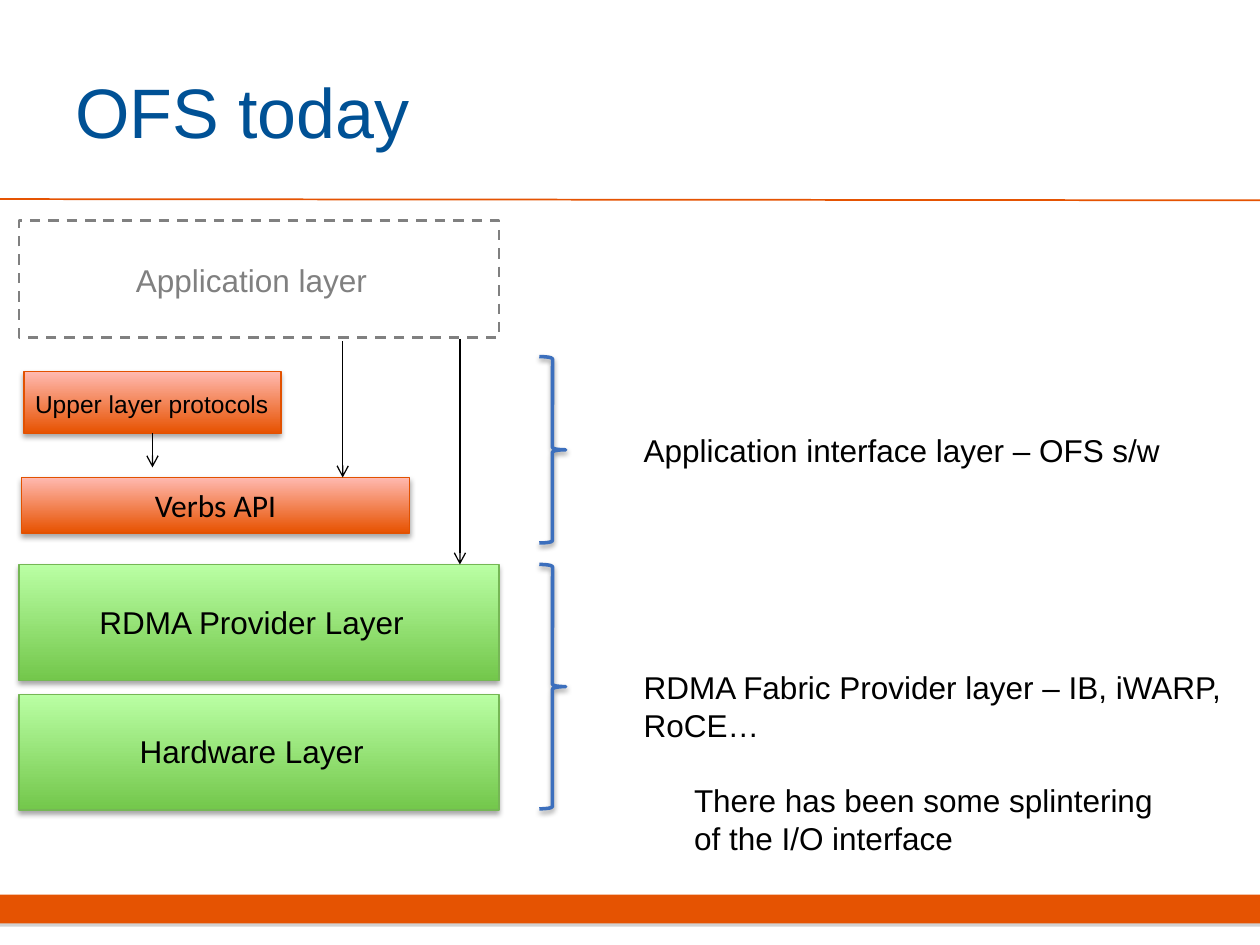
"""Build the slide that shows the OFS software layers of today."""
import pptx
import pptx.util
import pptx.dml.color
import pptx.enum.dml
import pptx.enum.shapes
import pptx.enum.text
import pptx.oxml
import pptx.oxml.ns

Inches, Pt = pptx.util.Inches, pptx.util.Pt
Kind = pptx.enum.shapes.MSO_SHAPE
Anchor = pptx.enum.text.MSO_ANCHOR
Align = pptx.enum.text.PP_ALIGN
Size = pptx.enum.text.MSO_AUTO_SIZE

HUES = {
    "orange": "E55302", "edge": "E25100", "deep": "E75200", "pink": "FFB9B0",
    "green": "73C74B", "lime": "BAFFA4", "moss": "75B755", "gray": "808080",
    "blue": "3C6FBD", "navy": "005195", "black": "000000",
}
WARM = ("deep", "pink", "edge")
COOL = ("green", "lime", "moss")

LEFT, WIDE = 0.15, 3.81
LAYERS = [
    ("upper", (0.19, 2.95, 2.04, 0.49), WARM),
    ("verbs", (0.17, 3.79, 3.08, 0.44), WARM),
    ("rdma", (LEFT, 4.48, WIDE, 0.92), COOL),
    ("hard", (LEFT, 5.51, WIDE, 0.92), COOL),
]
LABELS = [
    ("Application layer", (0.98, 2.02, 2.05, 0.4), {"hue": "gray"}),
    ("Upper layer protocols", (0.18, 3.04, 2.06, 0.34), {"size": 14}),
    ("RDMA Provider Layer", (0.69, 4.74, 2.64, 0.4), {}),
    ("Hardware Layer", (1.01, 5.76, 2, 0.4), {}),
]
NOTES = [
    ("Application interface layer – OFS s/w", (5.01, 3.37, 4.35, 0.4)),
    ("RDMA Fabric Provider layer – IB, iWARP, RoCE…", (5.01, 5.25, 5.43, 0.71)),
    ("There has been some splintering of the I/O interface", (5.41, 6.15, 3.95, 0.71)),
]
BRACES = [(2.83, 1.48), (4.48, 1.94)]
ARROWS = [(2.72, 2.71, 3.79), (3.65, 2.69, 4.48)]


def tint(name):
    return pptx.dml.color.RGBColor.from_string(HUES[name])


def write(frame, text, size=18, hue="black", font="Arial", align=Align.LEFT,
          anchor=Anchor.TOP, wrap=True, grow=False):
    frame.word_wrap = wrap
    frame.vertical_anchor = anchor
    frame.auto_size = Size.SHAPE_TO_FIT_TEXT if grow else Size.NONE
    line = frame.paragraphs[0]
    line.alignment = align
    run = line.add_run()
    run.text = text
    run.font.size = Pt(size)
    run.font.name = font
    run.font.color.rgb = tint(hue)


def label(slide, text, place, **form):
    box = slide.shapes.add_textbox(*map(Inches, place))
    write(box.text_frame, text, **form)


def shade(shape, hue="black", alpha=35, blur=3.1, drop=1.8):
    glow = pptx.oxml.parse_xml(
        f'<a:outerShdw {pptx.oxml.ns.nsdecls("a")} blurRad="{Pt(blur)}" dist="{Pt(drop)}" '
        f'dir="5400000" rotWithShape="0"><a:srgbClr val="{HUES[hue]}">'
        f'<a:alpha val="{alpha * 1000}"/></a:srgbClr></a:outerShdw>')
    shape._element.spPr.find(pptx.oxml.ns.qn("a:effectLst")).append(glow)


def draw(slide, kind, place, fill=None, edge=None, width=0.75):
    shape = slide.shapes.add_shape(kind, *map(Inches, place))
    shape.shadow.inherit = False
    if fill is None:
        shape.fill.background()
    elif isinstance(fill, str):
        shape.fill.solid()
        shape.fill.fore_color.rgb = tint(fill)
    else:
        shape.fill.gradient()
        shape.fill.gradient_angle = 90
        for stop, name, spot in zip(shape.fill.gradient_stops, fill, (0, 1)):
            stop.color.rgb = tint(name)
            stop.position = spot
    if edge:
        shape.line.color.rgb = tint(edge)
        shape.line.width = Pt(width)
    else:
        shape.line.fill.background()
    return shape


def link(slide, start, end, hue="black", width=0.75, head=True):
    line = slide.shapes.add_connector(
        pptx.enum.shapes.MSO_CONNECTOR.STRAIGHT, *map(Inches, start + end))
    line.line.color.rgb = tint(hue)
    line.line.width = Pt(width)
    space = pptx.oxml.ns.nsdecls("a")
    if head:
        line.line._get_or_add_ln().append(
            pptx.oxml.parse_xml(f'<a:tailEnd {space} type="arrow"/>'))
    line._element.spPr.append(pptx.oxml.parse_xml(f"<a:effectLst {space}/>"))
    return line


def main():
    deck = pptx.Presentation()
    deck.slide_width, deck.slide_height = Inches(10), Inches(7.5)
    slide = deck.slides.add_slide(deck.slide_layouts[6])

    shade(draw(slide, Kind.RECTANGLE, (0, 7.1, 10, 0.23), "orange"), "gray", blur=0)
    link(slide, (0, 1.58), (10, 1.59), "orange", 1, head=False)
    label(slide, "OFS today", (0.5, 0.25, 8.17, 1.25), size=40, hue="navy",
          anchor=Anchor.MIDDLE)

    app = draw(slide, Kind.RECTANGLE, (LEFT, 1.75, WIDE, 0.93), edge="gray", width=1.5)
    app.line.dash_style = pptx.enum.dml.MSO_LINE.DASH
    boxes = {}
    for name, place, (low, high, edge) in LAYERS:
        boxes[name] = draw(slide, Kind.RECTANGLE, place, (low, high), edge)
        shade(boxes[name])
    write(boxes["verbs"].text_frame, "Verbs API", font="Calibri",
          align=Align.CENTER, anchor=Anchor.MIDDLE)

    for text, place, form in LABELS:
        label(slide, text, place, wrap=False, grow=True, **form)
    for text, place in NOTES:
        label(slide, text, place, grow=True)
    for top, tall in BRACES:
        brace = draw(slide, Kind.RIGHT_BRACE, (4.28, top, 0.21, tall), edge="blue", width=2)
        shade(brace, alpha=38, drop=1.6)

    link(slide, (1.21, 3.44), (1.21, 3.71)).begin_connect(boxes["upper"], 2)
    for x, top, end in ARROWS:
        link(slide, (x, top), (x, end))
    deck.save("out.pptx")


if __name__ == "__main__":
    main()
